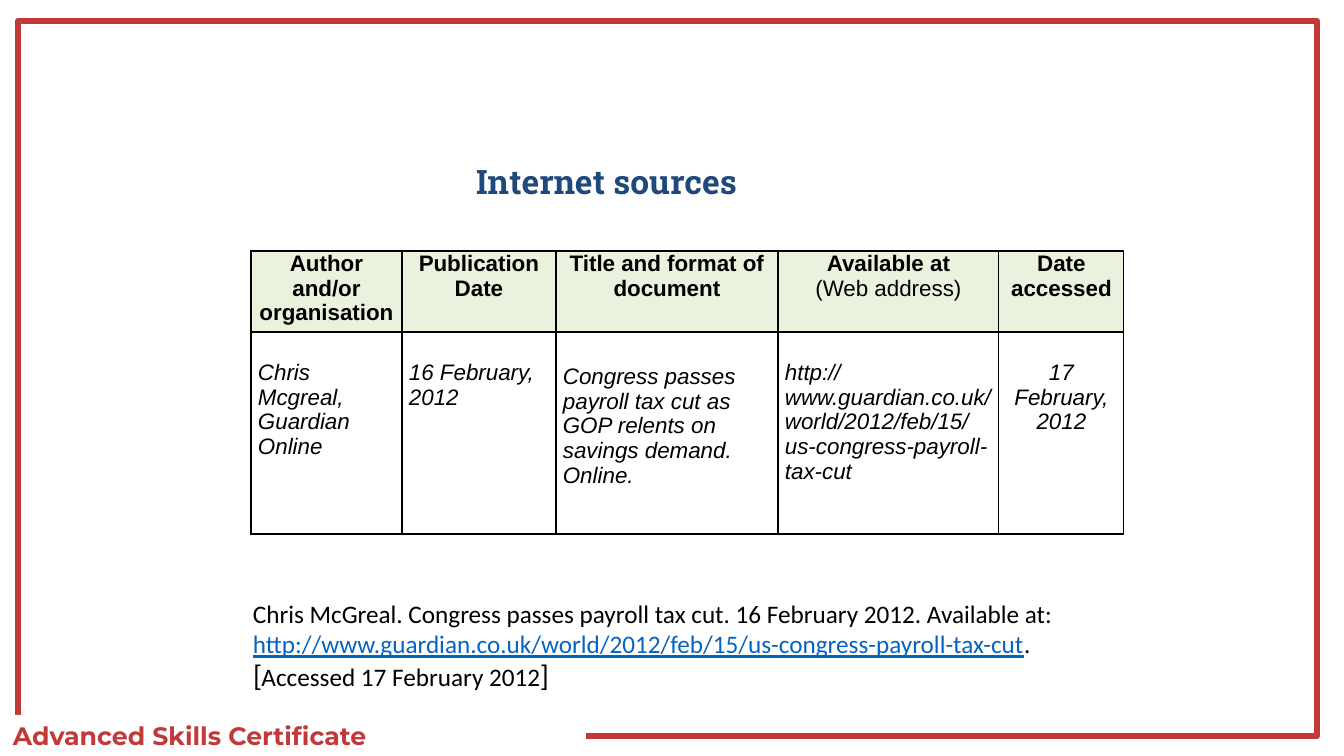
from itertools import product

from lxml import etree
from pptx import Presentation
from pptx import util as u
from pptx.dml.color import RGBColor
from pptx.enum import shapes, text
from pptx.oxml.ns import qn

PX = u.Inches(1) / 100.8
COLORS = {
    "red": "C23939", "navy": "1F497D", "black": "000000",
    "white": "FFFFFF", "green": "EAF1DD", "link": "0563C1",
}
COLUMN_WIDTHS = [151, 154, 222, 221, 125]
ROW_HEIGHTS = [81, 202]
HEADINGS = [
    ["Author and/or organisation"],
    ["Publication Date"],
    ["Title and format of", "document"],
    ["Available at", "(Web address)"],
    ["Date accessed"],
]
SOURCE = [
    ["Chris Mcgreal,", "Guardian Online"],
    ["16 February, 2012"],
    ["Congress passes payroll tax cut as GOP relents on savings demand. Online."],
    ["http://www.guardian.co.uk/world/2012/feb/15/us-congress-payroll-tax-cut"],
    ["17 February, 2012"],
]
SOURCE_TOPS = [28, 28, 32, 28, 28]
REFERENCE = [
    ("Chris McGreal. Congress passes payroll tax cut. 16 February 2012. Available at: ",
     18, "Calibri", "black"),
    (SOURCE[3][0], 18, "Calibri", "link"),
    (". ", 18, "Calibri", "black"),
    ("[", 20, "Lato", "black"),
    ("Accessed 17 February 2012", 18, "Calibri", "black"),
    ("]", 20, "Lato", "black"),
]


def px(n):
    return u.Emu(round(n * PX))


def box(*edges):
    return [px(n) for n in edges]


def rgb(name):
    return RGBColor.from_string(COLORS[name])


def style(font, size, face, color, bold=False, italic=False):
    font.size, font.name = u.Pt(size), face
    font.color.rgb = rgb(color)
    font.bold, font.italic = bold, italic


def add_rectangle(slide, edges, fill=None, line=None):
    rectangle = slide.shapes.add_shape(shapes.MSO_SHAPE.RECTANGLE, *box(*edges))
    rectangle.shadow.inherit = False
    if fill:
        rectangle.fill.solid()
        rectangle.fill.fore_color.rgb = rgb(fill)
    else:
        rectangle.fill.background()
    if line:
        rectangle.line.color.rgb = rgb(line)
        rectangle.line.width = u.Pt(4.5)
    else:
        rectangle.line.fill.background()
    return rectangle


def add_frame(slide):
    add_rectangle(slide, (18, 21, 1299, 715), line="red")
    footer = add_rectangle(slide, (3, 715, 583, 40), fill="white").text_frame
    footer.vertical_anchor = text.MSO_ANCHOR.TOP
    footer.text = "Advanced Skills Certificate"
    footer.paragraphs[0].alignment = text.PP_ALIGN.LEFT
    style(footer.paragraphs[0].font, 18, "Montserrat", "red", bold=True)


def set_title(slide, words):
    title = slide.shapes.title
    title.left, title.top, title.width, title.height = box(466, 156, 373, 51)
    title.text_frame.text = words
    title.text_frame.vertical_anchor = text.MSO_ANCHOR.MIDDLE
    heading = title.text_frame.paragraphs[0]
    heading.alignment = text.PP_ALIGN.LEFT
    style(heading.font, 24, "Roboto Slab", "navy", bold=True)


def add_borders(cell):
    properties = cell._tc.get_or_add_tcPr()
    for place, side in enumerate(("lnL", "lnR", "lnT", "lnB")):
        line = etree.Element(qn(f"a:{side}"), w=str(u.Pt(1)))
        fill = etree.SubElement(line, qn("a:solidFill"))
        etree.SubElement(fill, qn("a:srgbClr"), val=COLORS["black"])
        properties.insert(place, line)


def fill_cell(cell, lines, color, top, centred, bold, italic):
    cell.fill.solid()
    cell.fill.fore_color.rgb = rgb(color)
    cell.margin_left = cell.margin_right = px(7)
    cell.margin_top, cell.margin_bottom = px(top), 0
    cell.text_frame.text = "\n".join(lines)
    for paragraph in cell.text_frame.paragraphs:
        if centred:
            paragraph.alignment = text.PP_ALIGN.CENTER
        weight = bold and not paragraph.text.startswith("(")
        style(paragraph.font, 16, "Arial", "black", weight, italic)
    add_borders(cell)


def add_sources_table(slide):
    edges = (251, 251, sum(COLUMN_WIDTHS), sum(ROW_HEIGHTS))
    sources = slide.shapes.add_table(2, len(HEADINGS), *box(*edges)).table
    sources.first_row = sources.horz_banding = False
    for column, width in zip(sources.columns, COLUMN_WIDTHS):
        column.width = px(width)
    for row, height in zip(sources.rows, ROW_HEIGHTS):
        row.height = px(height)
    last = len(HEADINGS) - 1
    for r, c in product(range(2), range(len(HEADINGS))):
        header = r == 0
        fill_cell(
            sources.cell(r, c),
            HEADINGS[c] if header else SOURCE[c],
            "green" if header else "white",
            0 if header else SOURCE_TOPS[c],
            centred=header or c == last, bold=header, italic=not header,
        )


def add_reference(slide):
    reference = slide.shapes.add_textbox(*box(243, 593, 897, 105)).text_frame
    reference.word_wrap = True
    reference.vertical_anchor = text.MSO_ANCHOR.MIDDLE
    for words, size, face, color in REFERENCE:
        part = reference.paragraphs[0].add_run()
        part.text = words
        style(part.font, size, face, color)
        part.font.underline = color == "link"


def main():
    deck = Presentation()
    deck.slide_width, deck.slide_height = box(1344, 756)
    slide = deck.slides.add_slide(deck.slide_layouts[5])  # title only
    # Border and programme name
    add_frame(slide)
    # Heading, table of source details, finished reference
    set_title(slide, "Internet sources")
    add_sources_table(slide)
    add_reference(slide)
    deck.save("out.pptx")


if __name__ == "__main__":
    main()
